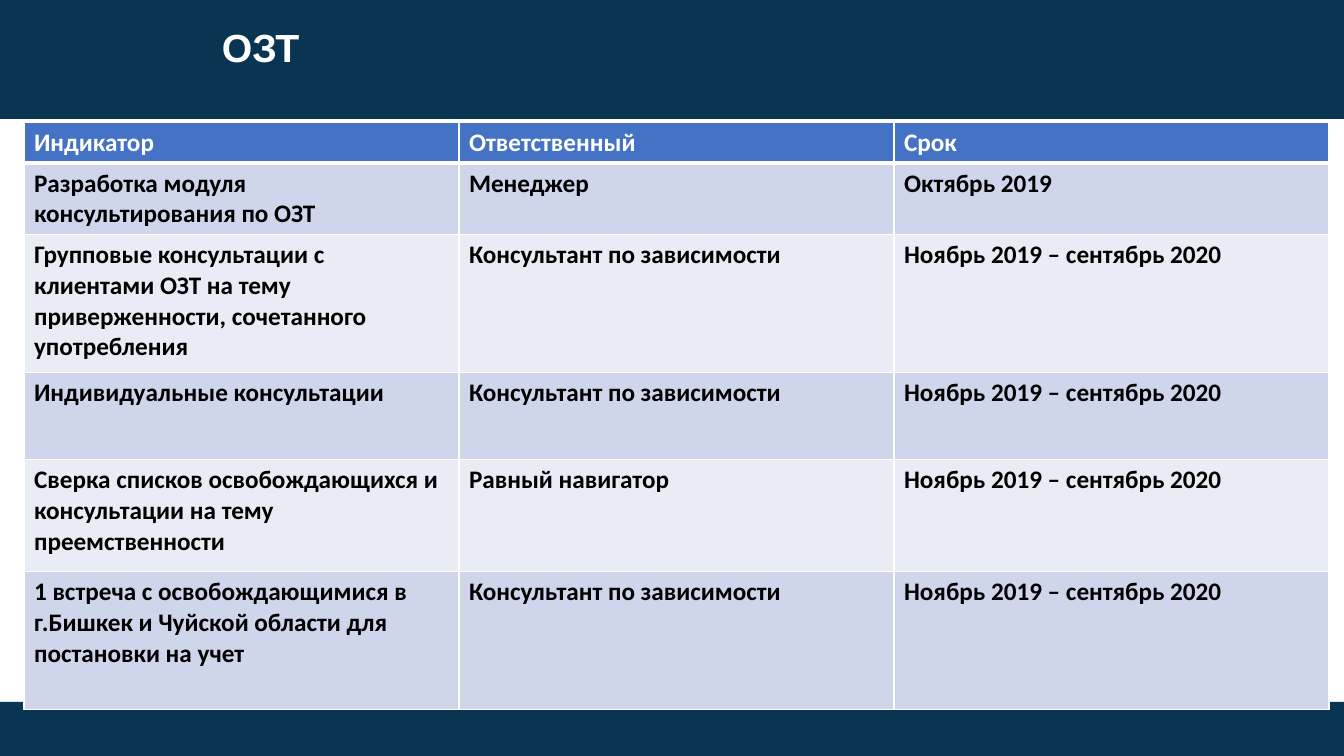
"""Builds the slide with the OST indicator table."""
import pptx
import pptx.util
import pptx.dml.color
import pptx.enum.shapes
import pptx.enum.text
import pptx.oxml
import pptx.oxml.ns

RGB = pptx.dml.color.RGBColor
NAVY = RGB(0x09, 0x35, 0x52)
BLUE = RGB(0x44, 0x72, 0xC4)
BAND_DARK = RGB(0xCF, 0xD5, 0xEA)
BAND_LIGHT = RGB(0xE9, 0xEB, 0xF5)
WHITE = RGB(0xFF, 0xFF, 0xFF)
BLACK = RGB(0x00, 0x00, 0x00)

HEADING = "ОЗТ"
CONSULTANT = "Консультант по зависимости"
PERIOD = "Ноябрь 2019 – сентябрь 2020"
INDICATORS = [
    ("Индикатор", "Ответственный", "Срок"),
    ("Разработка модуля консультирования по ОЗТ", "Менеджер", "Октябрь 2019"),
    ("Групповые консультации с клиентами ОЗТ на тему приверженности, "
     "сочетанного употребления", CONSULTANT, PERIOD),
    ("Индивидуальные консультации", CONSULTANT, PERIOD),
    ("Сверка списков освобождающихся и консультации на тему преемственности",
     "Равный навигатор", PERIOD),
    ("1 встреча с освобождающимися в г.Бишкек и Чуйской области для "
     "постановки на учет", CONSULTANT, PERIOD),
]

SLIDE_SIZE = (1344, 756)
BANDS = [(0, 0, 1344, 119), (0, 702, 1344, 54)]
HEADING_BOX = (212, -19, 907, 126)
TABLE_ORIGIN = (24, 122)
COLUMN_WIDTH = 435
ROW_HEIGHTS = [41, 71, 138, 87, 112, 138]
EMU_PER_PX = 12192000 / 1344


def px(length):
    """Turn px into EMU."""
    return pptx.util.Emu(round(length * EMU_PER_PX))


HEADING_FRAME = {
    "margin_left": px(10), "margin_right": px(10),
    "margin_top": px(17), "margin_bottom": px(5), "word_wrap": True,
    "vertical_anchor": pptx.enum.text.MSO_ANCHOR.MIDDLE,
}
HEADING_PARAGRAPH = {
    "alignment": pptx.enum.text.PP_ALIGN.LEFT, "line_spacing": 0.9,
}
HEADING_FONT = {"name": "Arial", "size": pptx.util.Pt(28), "bold": True}
CELL_FONT = {"name": "Calibri", "size": pptx.util.Pt(18), "bold": True}


def apply(target, values):
    """Set every attribute named in values."""
    for name, value in values.items():
        setattr(target, name, value)


def add_band(slide, box):
    """Add one navy band."""
    band = slide.shapes.add_shape(
        pptx.enum.shapes.MSO_SHAPE.RECTANGLE, *map(px, box))
    band.shadow.inherit = False
    band.fill.solid()
    band.fill.fore_color.rgb = NAVY
    band.line.fill.background()


def add_heading(slide):
    """Fill the title placeholder and bring it above the bands."""
    heading = slide.shapes.title
    apply(heading, dict(zip(("left", "top", "width", "height"),
                            map(px, HEADING_BOX))))
    frame = heading.text_frame
    frame.text = HEADING
    apply(frame, HEADING_FRAME)
    paragraph = frame.paragraphs[0]
    apply(paragraph, HEADING_PARAGRAPH)
    font = paragraph.runs[0].font
    apply(font, HEADING_FONT)
    font.color.rgb = WHITE
    slide.shapes._spTree.append(heading._element)


def set_borders(cell, row):
    """Give a cell white borders, thick under the header."""
    widths = {"L": 1, "R": 1, "T": 3 if row == 1 else 1,
              "B": 3 if row == 0 else 1}
    properties = cell._tc.get_or_add_tcPr()
    for side, width in widths.items():
        properties.append(pptx.oxml.parse_xml(
            f'<a:ln{side} {pptx.oxml.ns.nsdecls("a")} '
            f'w="{pptx.util.Pt(width)}"><a:solidFill>'
            f'<a:srgbClr val="{WHITE}"/></a:solidFill></a:ln{side}>'))


def add_indicators(slide):
    """Add the indicator table."""
    columns = len(INDICATORS[0])
    table = slide.shapes.add_table(
        len(INDICATORS), columns, *map(px, TABLE_ORIGIN),
        px(columns * COLUMN_WIDTH), px(sum(ROW_HEIGHTS))).table
    for column in table.columns:
        column.width = px(COLUMN_WIDTH)
    for row, (height, texts) in enumerate(zip(ROW_HEIGHTS, INDICATORS)):
        table.rows[row].height = px(height)
        band = BAND_DARK if row % 2 else BAND_LIGHT
        for column, text in enumerate(texts):
            cell = table.cell(row, column)
            cell.text = text
            set_borders(cell, row)
            cell.fill.solid()
            cell.fill.fore_color.rgb = band if row else BLUE
            font = cell.text_frame.paragraphs[0].runs[0].font
            apply(font, CELL_FONT)
            font.color.rgb = BLACK if row else WHITE


def main():
    """Build and save the slide."""
    deck = pptx.Presentation()
    deck.slide_width, deck.slide_height = map(px, SLIDE_SIZE)
    slide = deck.slides.add_slide(deck.slide_layouts.get_by_name("Title Only"))
    for box in BANDS:
        add_band(slide, box)
    add_heading(slide)
    add_indicators(slide)
    deck.save("out.pptx")


if __name__ == "__main__":
    main()
